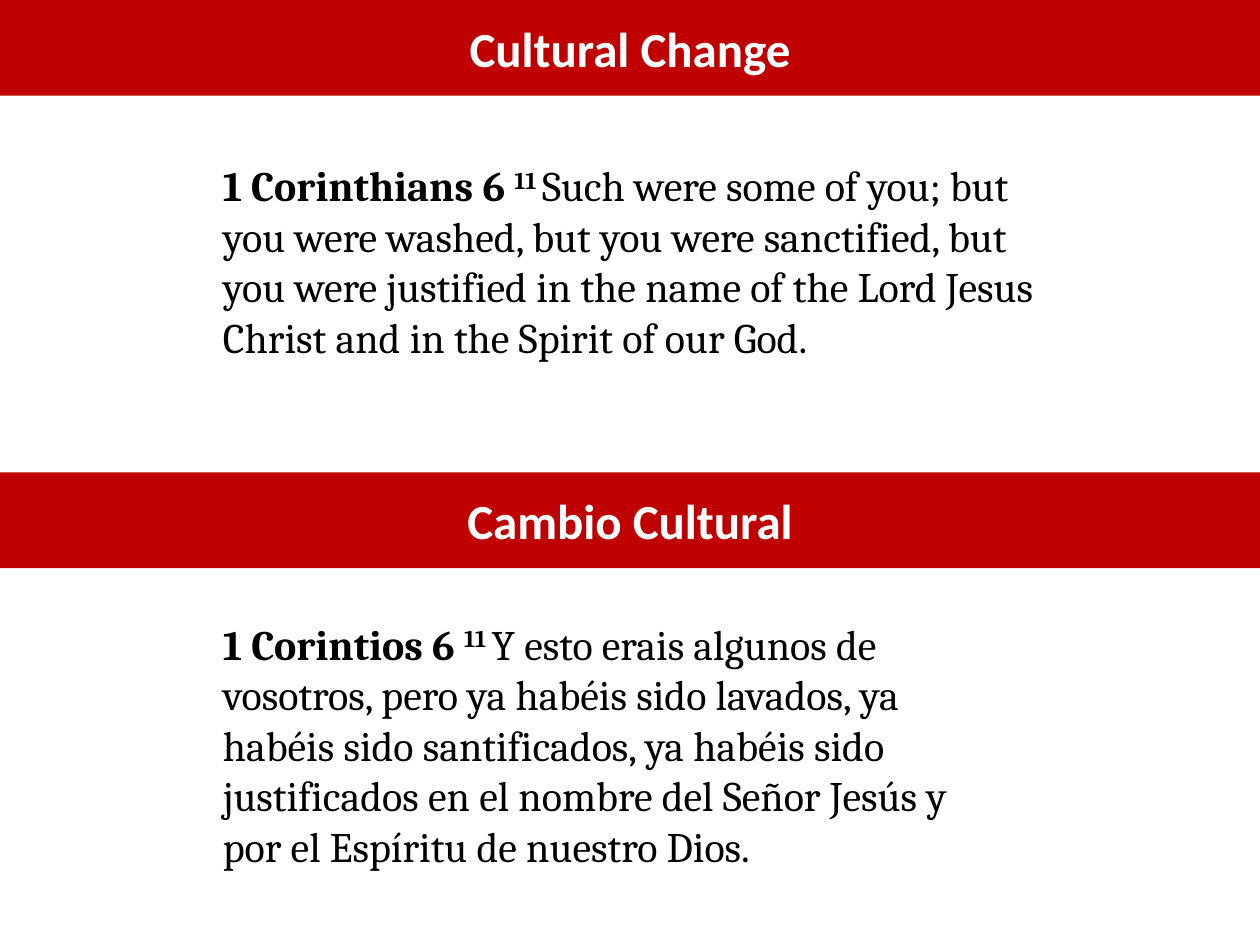
"""Build a bilingual slide that sets a verse under an English and a Spanish heading."""
from dataclasses import dataclass

from pptx import Presentation
from pptx.dml.color import RGBColor
from pptx.enum.shapes import MSO_SHAPE
from pptx.enum.text import MSO_ANCHOR, MSO_AUTO_SIZE, PP_ALIGN
from pptx.util import Inches, Pt


@dataclass(frozen=True)
class Theme:
    banner: RGBColor = RGBColor(0xC0, 0x00, 0x00)
    heading: RGBColor = RGBColor(0xFF, 0xFF, 0xFF)
    verse: RGBColor = RGBColor(0x00, 0x00, 0x00)
    heading_font: str = "Calibri"
    verse_font: str = "Cambria"
    heading_size: Pt = Pt(28)
    verse_size: Pt = Pt(24)


class VerseSlide:
    def __init__(self, deck, theme):
        self.theme = theme
        self.width = deck.slide_width
        self.slide = deck.slides.add_slide(deck.slide_layouts[6])

    def style(self, paragraph, name, size, color):
        paragraph.font.name = name
        paragraph.font.size = size
        paragraph.font.color.rgb = color

    def banner(self, title, top):
        band = self.slide.shapes.add_shape(
            MSO_SHAPE.RECTANGLE, 0, Inches(top), self.width, Inches(0.76))
        band.shadow.inherit = False
        band.fill.solid()
        band.fill.fore_color.rgb = self.theme.banner
        band.line.fill.background()
        band.text_frame.vertical_anchor = MSO_ANCHOR.MIDDLE
        heading = band.text_frame.paragraphs[0]
        heading.text = title
        heading.alignment = PP_ALIGN.CENTER
        heading.font.bold = True
        self.style(heading, self.theme.heading_font, self.theme.heading_size,
                   self.theme.heading)

    def verse(self, book, number, words, top, width, height):
        passage = self.slide.shapes.add_textbox(
            Inches(1.67), Inches(top), Inches(width), Inches(height)).text_frame
        passage.word_wrap = True
        passage.auto_size = MSO_AUTO_SIZE.SHAPE_TO_FIT_TEXT
        paragraph = passage.paragraphs[0]
        self.style(paragraph, self.theme.verse_font, self.theme.verse_size,
                   self.theme.verse)
        for text, bold, raised in ((book, True, False), (number, True, True),
                                   (words, False, False)):
            run = paragraph.add_run()
            run.text = text
            run.font.bold = bold
            if raised:
                run._r.get_or_add_rPr().set("baseline", "30000")


def main():
    deck = Presentation()
    deck.slide_width, deck.slide_height = Inches(10), Inches(7.5)
    page = VerseSlide(deck, Theme())
    page.banner("Cultural Change", 0)
    page.banner("Cambio Cultural", 3.75)
    page.verse(
        "1 Corintios 6 ", "11 ",
        "Y esto erais algunos de vosotros, pero ya habéis sido lavados, "
        "ya habéis sido santificados, ya habéis sido justificados en el nombre "
        "del Señor Jesús y por el Espíritu de nuestro Dios.",
        4.86, 6.05, 2.55)
    page.verse(
        "1 Corinthians 6 ", "11 ",
        "Such were some of you; but you were washed, but you were sanctified, "
        "but you were justified in the name of the Lord Jesus Christ and in "
        "the Spirit of our God.",
        1.22, 6.66, 2.2)
    deck.save("out.pptx")


if __name__ == "__main__":
    main()
